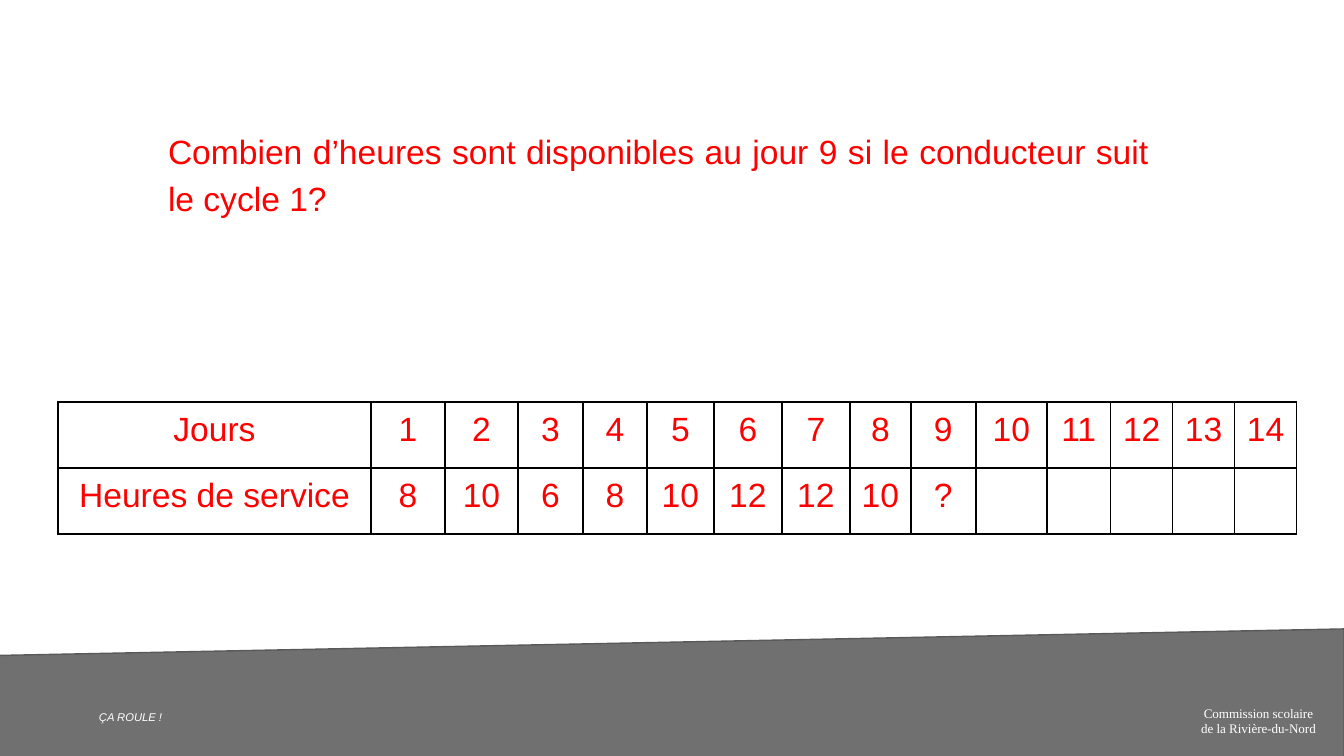
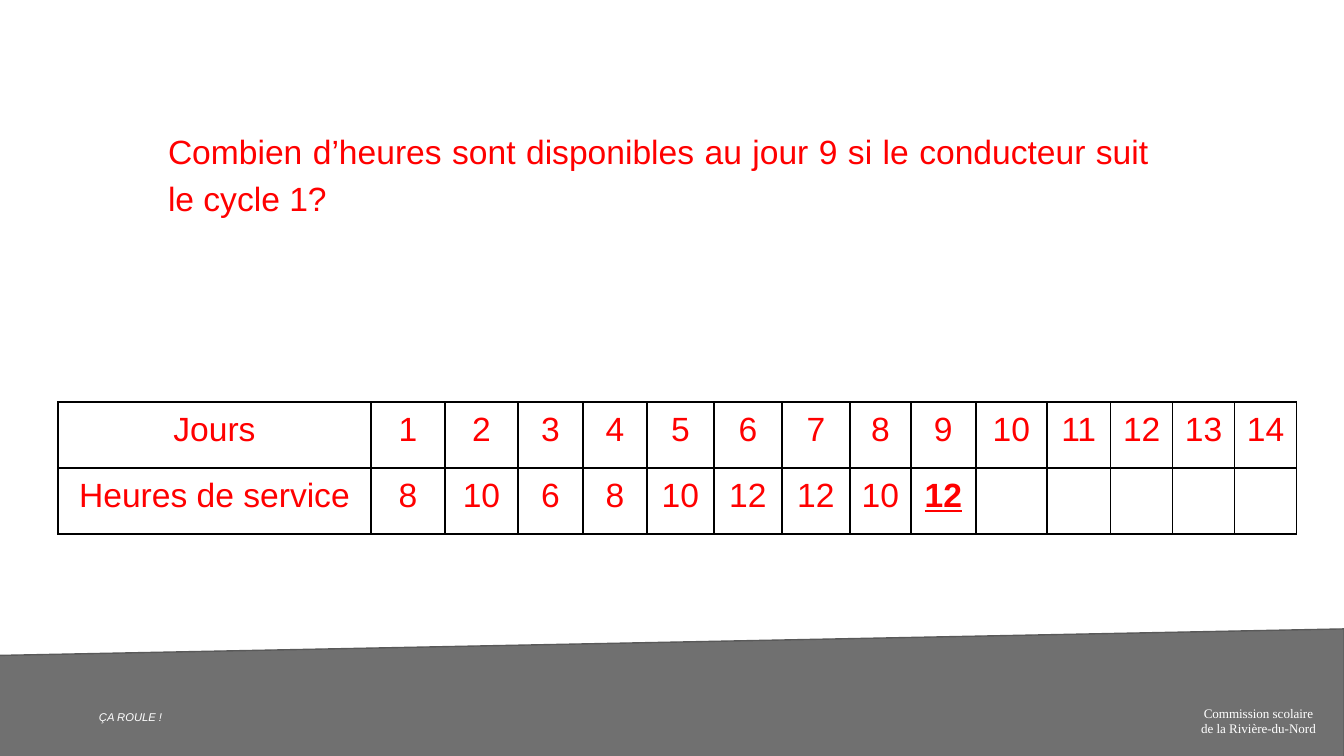
from lxml import etree
from pptx import Presentation
from pptx.dml.color import RGBColor
from pptx.enum.shapes import MSO_SHAPE
from pptx.enum.text import MSO_ANCHOR, MSO_AUTO_SIZE, PP_ALIGN
from pptx.oxml.ns import qn
from pptx.util import Pt

SCALE = 9144000 / 1344
BLACK = RGBColor(0x00, 0x00, 0x00)
WHITE = RGBColor(0xFF, 0xFF, 0xFF)
RED = RGBColor(0xFF, 0x00, 0x00)
DARK_GREY = RGBColor(0x59, 0x59, 0x59)

QUESTION = "Combien d’heures sont disponibles au jour 9 si le conducteur suit le cycle 1?"
SERVICE_HOURS = ["8", "10", "6", "8", "10", "12", "12", "10"]
COLUMN_WIDTHS = [313, 74, 73, 65, 64, 67, 68, 68, 61, 65, 71, 64, 62, 62, 62]
ROW_HEIGHT = 66

MAIN_FONT = {"name": "Arial", "size": Pt(18)}
PLAIN = {}
ANSWER = {"bold": True, "underline": True}


def px(value):
    return round(value * SCALE)


def write(frame, lines, font_format, color, alignment, margin=13):
    for side in ("left", "top", "right", "bottom"):
        setattr(frame, f"margin_{side}", px(margin))
    frame.word_wrap = True
    frame.vertical_anchor = MSO_ANCHOR.TOP
    for number, line in enumerate(lines):
        paragraph = frame.add_paragraph() if number else frame.paragraphs[0]
        paragraph.alignment = alignment
        run = paragraph.add_run()
        run.text = line
        for attribute, value in font_format.items():
            setattr(run.font, attribute, value)
        run.font.color.rgb = color


presentation = Presentation()
presentation.slide_width = px(1344)
presentation.slide_height = px(756)
layout = presentation.slide_layouts[5]
slides = [presentation.slides.add_slide(layout) for _ in range(2)]
shapes = slides[0].shapes

band = shapes.add_shape(MSO_SHAPE.FLOWCHART_MANUAL_INPUT, px(-3), px(629), px(1347), px(133))
band.shadow.inherit = False
band.fill.solid()
band.fill.fore_color.rgb = BLACK
band_color = band.element.spPr.find(qn("a:solidFill")).find(qn("a:srgbClr"))
etree.SubElement(band_color, qn("a:alpha"), val="56000")
band.line.color.rgb = DARK_GREY
band.line.width = Pt(0.75)

school_board = shapes.add_textbox(px(1173), px(692), px(171), px(40))
write(school_board.text_frame, ["Commission scolaire", "de la Rivière-du-Nord"],
      {"name": "Times New Roman", "size": Pt(7)}, WHITE, PP_ALIGN.CENTER)

course_name = shapes.add_textbox(px(86), px(704), px(109), px(39))
write(course_name.text_frame, ["ÇA ROULE !"],
      {"name": "Arial", "size": Pt(6), "italic": True}, WHITE, PP_ALIGN.LEFT)

for shape in (band, school_board, course_name):
    layout.shapes.element.append(shape.element)

for slide, day_nine, day_nine_format in zip(slides, ("?", "12"), (PLAIN, ANSWER)):
    title = slide.shapes.title
    title.left, title.top, title.width, title.height = px(155), px(112), px(1007), px(114)
    write(title.text_frame, [QUESTION], MAIN_FONT, RED, PP_ALIGN.JUSTIFY)
    title.text_frame.auto_size = MSO_AUTO_SIZE.NONE
    title.text_frame.paragraphs[0].line_spacing = 1.15

    rows = [
        ["Jours"] + [str(day) for day in range(1, 15)],
        ["Heures de service"] + SERVICE_HOURS + [day_nine] + [""] * 5,
    ]
    table = slide.shapes.add_table(
        len(rows), len(COLUMN_WIDTHS), px(58), px(402),
        px(sum(COLUMN_WIDTHS)), px(ROW_HEIGHT * len(rows))).table
    table.first_row = False
    table.horz_banding = False
    for column, width in zip(table.columns, COLUMN_WIDTHS):
        column.width = px(width)
    for row_index, values in enumerate(rows):
        table.rows[row_index].height = px(ROW_HEIGHT)
        for column_index, value in enumerate(values):
            cell = table.cell(row_index, column_index)
            properties = cell._tc.get_or_add_tcPr()
            for edge in ("lnL", "lnR", "lnT", "lnB"):
                border = etree.SubElement(properties, qn(f"a:{edge}"), w=str(Pt(1)))
                fill = etree.SubElement(border, qn("a:solidFill"))
                etree.SubElement(fill, qn("a:srgbClr"), val=str(BLACK))
            cell.fill.background()
            for side in ("left", "top", "right", "bottom"):
                setattr(cell, f"margin_{side}", px(9))
            if value:
                paragraph = cell.text_frame.paragraphs[0]
                paragraph.alignment = PP_ALIGN.CENTER
                run = paragraph.add_run()
                run.text = value
                is_day_nine = (row_index, column_index) == (1, 9)
                extra = day_nine_format if is_day_nine else PLAIN
                for attribute, setting in {**MAIN_FONT, **extra}.items():
                    setattr(run.font, attribute, setting)
                run.font.color.rgb = RED

presentation.save("out.pptx")
